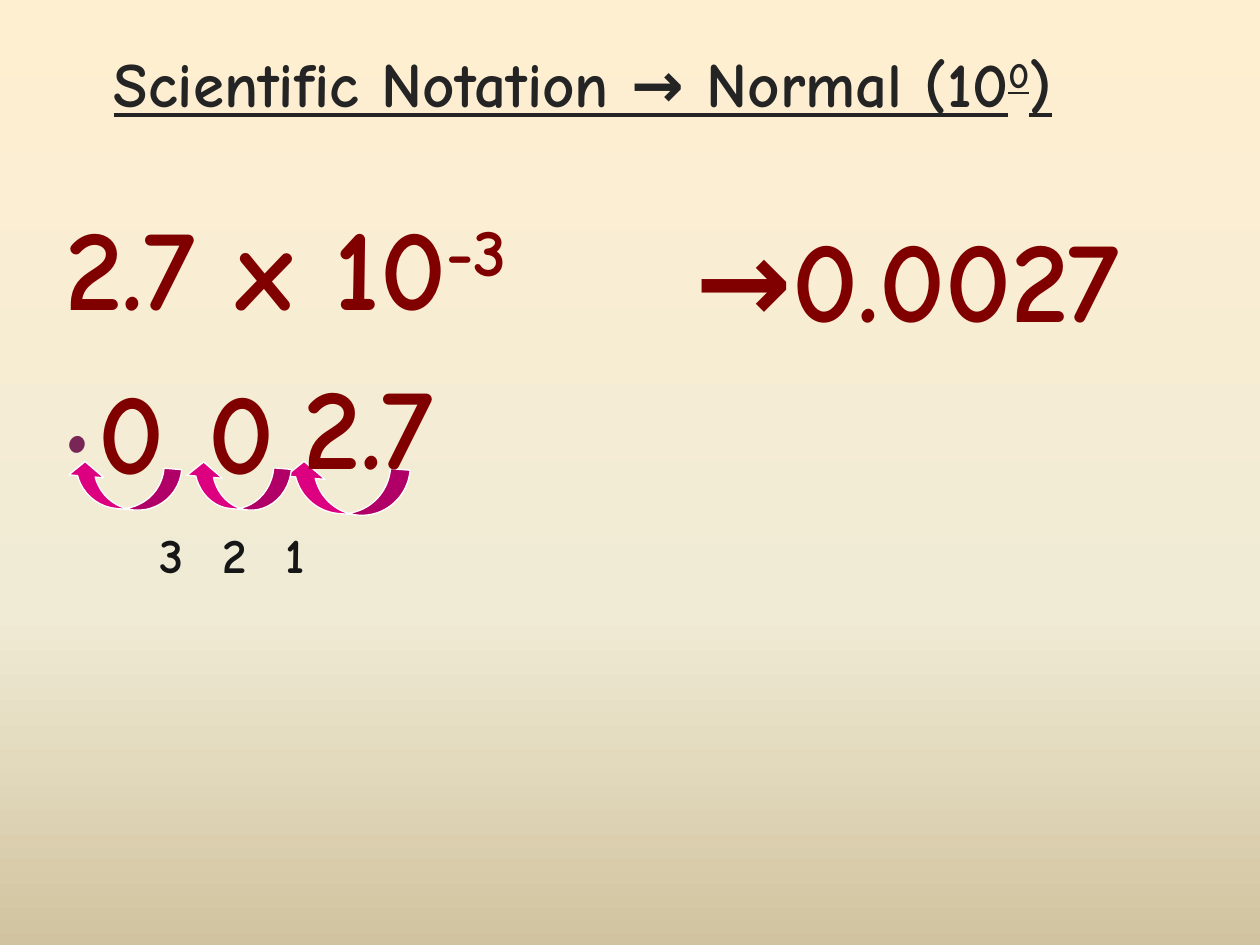
import copy

import pptx
import pptx.dml.color
import pptx.enum.shapes
import pptx.enum.text
import pptx.oxml.ns
import pptx.util

Cm = pptx.util.Cm
FONT = "Comic Neue"
MAROON, PLUM, INK, TITLE_INK = "800000", "772655", "161616", "242424"
PINK, WHITE = "DC0081", "FFFFFF"

BACKGROUND = [(0, "FFEFD1"), (0.65, "F0EBD5"), (1, "D1C39F")]

# Each run is (text, is superscript); boxes are left, top, width, height in cm
TITLE = [("Scientific Notation → Normal (10", False), ("0", True), (")", False)]
TITLE_BOX = (0, -0.64, 23.5, 3.18)

EXPRESSIONS = [
    ([("2.7 x 10", False), ("-3", True)], (1.07, 3.81, 17.78, 3.07), 66, MAROON),
    ([("2.7", False)], (5.87, 7.01, 4.83, 3.07), 66, MAROON),
    ([(".", False)], (1.07, 6.17, 1.7, 3.63), 80, PLUM),
    ([("0", False)], (3.96, 7.11, 2.49, 3.05), 66, MAROON),
    ([("0", False)], (1.73, 7.11, 2.49, 3.05), 66, MAROON),
    ([("→0.0027", False)], (13.77, 4.04, 11.05, 3.07), 66, MAROON),
]

# Decimal-point hops: left, width, height in cm
HOPS = [(5.69, 2.54, 0.99), (3.71, 2.13, 0.89), (1.32, 2.31, 0.89)]
HOP_TOP, HOP_ROTATION = 9.37, 184.8
HOP_ADJUSTMENTS = (0.4, 0.8, 0.33)

STEPS = ["1", "2", "3"]
STEP_LEFT, STEP_TOP, STEP_PITCH = 5.51, 10.44, 1.27


def color(value):
    return pptx.dml.color.RGBColor.from_string(value)


def paint_background(slide):
    fill = slide.background.fill
    fill.gradient()
    fill.gradient_angle = 270
    stop_list = slide.element.find(".//" + pptx.oxml.ns.qn("a:gsLst"))
    stop_list.append(copy.deepcopy(stop_list[-1]))
    for stop, (position, value) in zip(fill.gradient_stops, BACKGROUND):
        stop.position = position
        stop.color.rgb = color(value)


def add_text(slide, runs, box, size, text_color):
    shape = slide.shapes.add_textbox(*(Cm(length) for length in box))
    frame = shape.text_frame
    frame.word_wrap = True
    frame.auto_size = pptx.enum.text.MSO_AUTO_SIZE.SHAPE_TO_FIT_TEXT
    paragraph = frame.paragraphs[0]
    for text, superscript in runs:
        run = paragraph.add_run()
        run.text = text
        if superscript:
            run.font._element.set("baseline", "30000")
    font = paragraph.font
    font.name, font.size, font.bold = FONT, pptx.util.Pt(size), True
    font.color.rgb = color(text_color)
    return frame


def add_hop(slide, left, width, height):
    shape = slide.shapes.add_shape(
        pptx.enum.shapes.MSO_SHAPE.CURVED_DOWN_ARROW,
        Cm(left), Cm(HOP_TOP), Cm(width), Cm(height))
    for index, value in enumerate(HOP_ADJUSTMENTS):
        shape.adjustments[index] = value
    shape.rotation = HOP_ROTATION
    shape.shadow.inherit = False
    shape.fill.solid()
    shape.fill.fore_color.rgb = color(PINK)
    shape.line.color.rgb = color(WHITE)
    shape.line.width = pptx.util.Pt(0.75)


def main():
    presentation = pptx.Presentation()
    presentation.slide_width, presentation.slide_height = Cm(25.4), Cm(19.05)
    slide = presentation.slides.add_slide(presentation.slide_layouts[6])
    paint_background(slide)

    title = add_text(slide, TITLE, TITLE_BOX, 36, TITLE_INK)
    title.auto_size = pptx.enum.text.MSO_AUTO_SIZE.NONE
    title.vertical_anchor = pptx.enum.text.MSO_ANCHOR.BOTTOM
    title.paragraphs[0].alignment = pptx.enum.text.PP_ALIGN.CENTER
    for run in title.paragraphs[0].runs:
        run.font.underline = True

    for hop in HOPS:
        add_hop(slide, *hop)
    for index, step in enumerate(STEPS):
        box = (STEP_LEFT - index * STEP_PITCH, STEP_TOP, 2.77, 1.45)
        add_text(slide, [(step, False)], box, 28, INK)
    for expression in EXPRESSIONS:
        add_text(slide, *expression)

    presentation.save("out.pptx")


if __name__ == "__main__":
    main()
